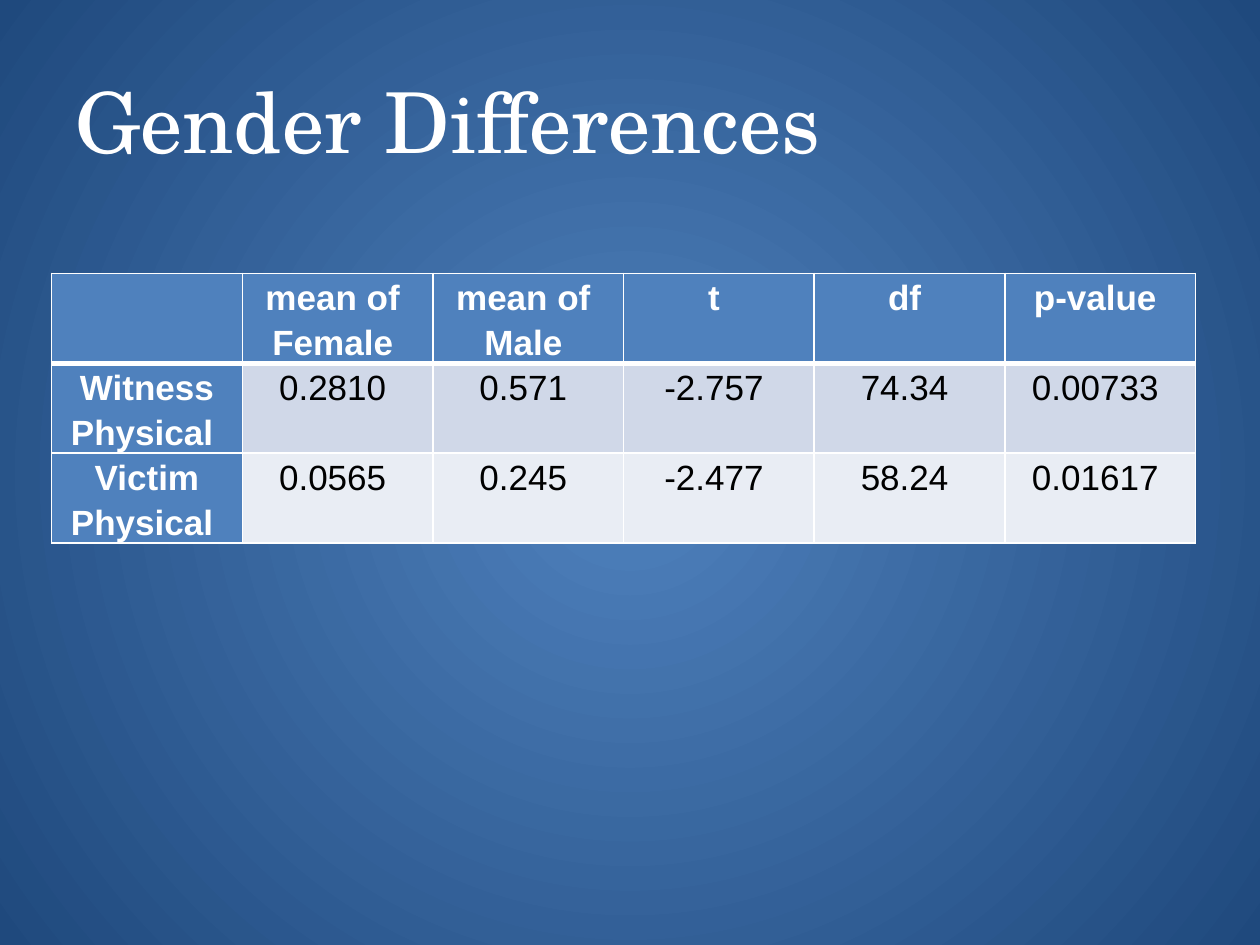
from lxml.etree import SubElement
from pptx import Presentation
from pptx.dml.color import RGBColor
from pptx.enum.text import MSO_ANCHOR, PP_ALIGN
from pptx.oxml import parse_xml
from pptx.oxml.ns import nsdecls, qn
from pptx.util import Inches, Pt

WHITE, BLACK, BLUE, NAVY = "FFFFFF", "000000", "4F81BD", "1F497D"
BANDS = ["D0D8E8", "E9EDF4"]


def color(value):
    return RGBColor.from_string(value)


def add_border(cell, side, points):
    line = SubElement(cell._tc.get_or_add_tcPr(), qn(f"a:ln{side}"), w=str(Pt(points)))
    fill = SubElement(line, qn("a:solidFill"))
    SubElement(fill, qn("a:srgbClr"), val=WHITE)


deck = Presentation()
deck.slide_width, deck.slide_height = Inches(10), Inches(7.5)
page = deck.slides.add_slide(deck.slide_layouts[6])

# Radial background, light at the centre
background = page.background.fill
background.gradient()
for stop, value in zip(background.gradient_stops, [BLUE, NAVY]):
    stop.color.rgb = color(value)
gradient = page.background._cSld.find(".//" + qn("a:gradFill"))
gradient.replace(gradient.find(qn("a:lin")), parse_xml(
    f'<a:path {nsdecls("a")} path="circle">'
    '<a:fillToRect l="50000" t="50000" r="50000" b="50000"/></a:path>'))

# Table of test results
rows = [
    ["", "mean of \nFemale ", "mean of \nMale ", "t ", "df ", "p-value "],
    ["Witness\nPhysical ", "0.2810 ", "0.571 ", "-2.757 ", "74.34 ", "0.00733 "],
    ["Victim\nPhysical ", "0.0565 ", "0.245 ", "-2.477 ", "58.24 ", "0.01617 "],
]
row_heights = [0.58, 0.48, 0.48]
table = page.shapes.add_table(len(rows), len(rows[0]), Inches(0.41), Inches(2.17),
                              Inches(9.08), Inches(sum(row_heights))).table
table.first_col = True
for row, height in zip(table.rows, row_heights):
    row.height = Inches(height)

for i, texts in enumerate(rows):
    for j, text in enumerate(texts):
        cell = table.cell(i, j)
        heading = i == 0 or j == 0
        cell.margin_left = cell.margin_right = Inches(0.07)
        cell.margin_top = cell.margin_bottom = 0
        cell.vertical_anchor = MSO_ANCHOR.TOP
        cell.text = text
        for para in cell.text_frame.paragraphs:
            para.alignment = PP_ALIGN.CENTER
            para.line_spacing = 1.15
            para.font.name, para.font.size = "Arial", Pt(20)
            para.font.bold = heading
            para.font.color.rgb = color(WHITE if heading else BLACK)
        # Borders come before the fill in the cell properties
        for side in "LRTB":
            header_rule = (i == 0 and side == "B") or (i == 1 and side == "T")
            add_border(cell, side, 3 if header_rule else 1)
        cell.fill.solid()
        cell.fill.fore_color.rgb = color(BLUE if heading else BANDS[i - 1])

# Title
box = page.shapes.add_textbox(Inches(0.5), Inches(0.5), Inches(9), Inches(1.25))
box.text_frame.word_wrap = True
box.text_frame.text = "Gender Differences"
para = box.text_frame.paragraphs[0]
para.font.name, para.font.size = "TeX Gyre Schola", Pt(48)
para.font.color.rgb = color(WHITE)

deck.save("out.pptx")
